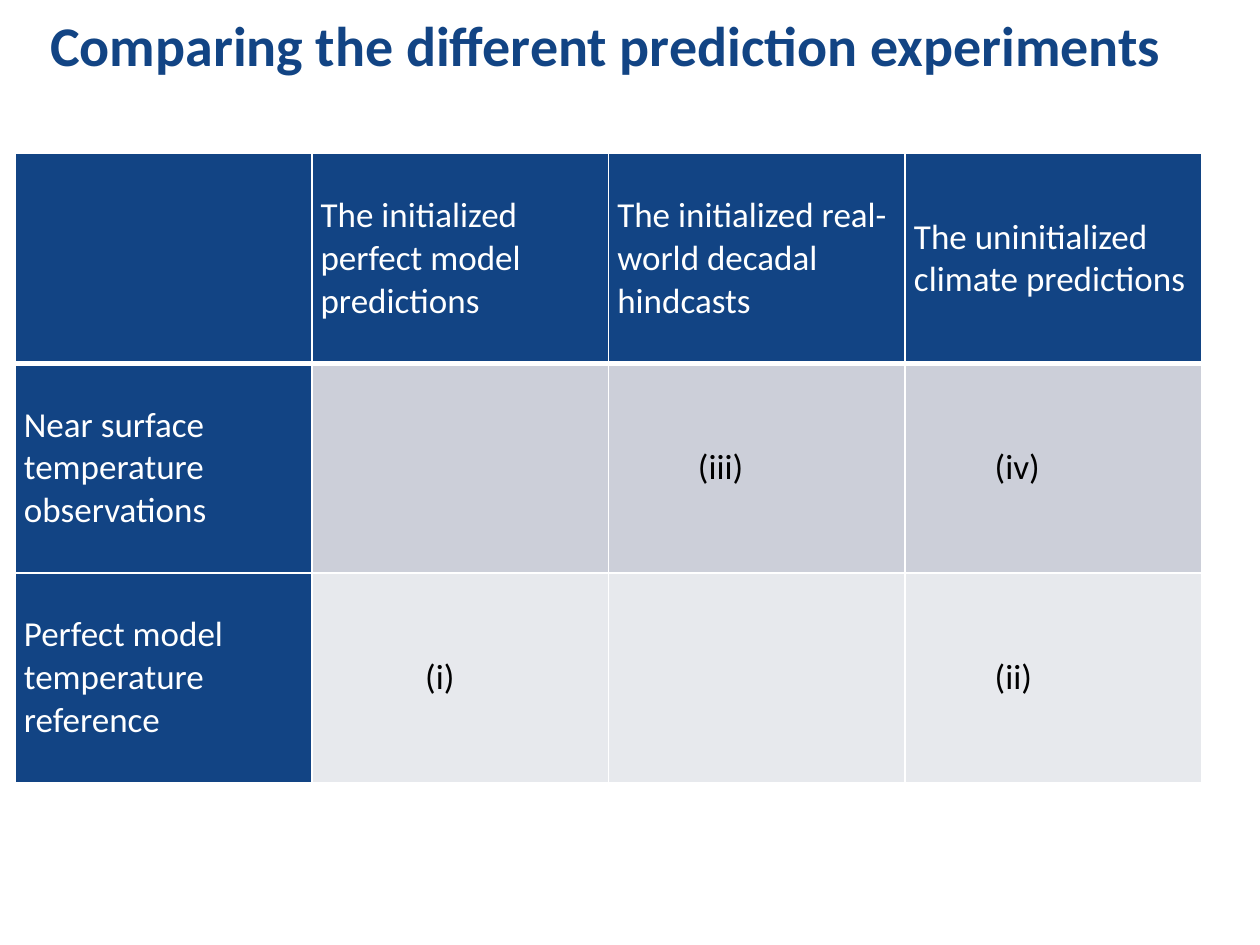
from lxml import etree
from pptx import Presentation
from pptx.dml.color import RGBColor
from pptx.enum.text import MSO_ANCHOR
from pptx.oxml.ns import qn
from pptx.util import Inches, Pt

NAVY = RGBColor(0x12, 0x44, 0x84)
WHITE = RGBColor(0xFF, 0xFF, 0xFF)
BLACK = RGBColor(0, 0, 0)
BANDS = [RGBColor(0xCC, 0xCF, 0xD9), RGBColor(0xE7, 0xE9, 0xED)]

ROWS = [
    ["", "The initialized perfect model predictions",
     "The initialized real-world decadal hindcasts",
     "The uninitialized climate predictions"],
    ["Near surface temperature observations", "", "(iii)", "(iv)"],
    ["Perfect model temperature reference", "(i)", "", "(ii)"],
]


def add_run(p, text, size, color, bold=False):
    r = p.add_run()
    r.text = text
    r.font.name = "Calibri"
    r.font.size = Pt(size)
    r.font.bold = bold
    r.font.color.rgb = color


def add_borders(cell, bottom):
    """Draw white cell borders, 1 pt except for the given bottom width."""
    tc_pr = cell._tc.get_or_add_tcPr()
    for side, width in (("L", 1), ("R", 1), ("T", 1), ("B", bottom)):
        ln = etree.SubElement(tc_pr, qn(f"a:ln{side}"), w=str(Pt(width)))
        fill = etree.SubElement(ln, qn("a:solidFill"))
        etree.SubElement(fill, qn("a:srgbClr"), val=str(WHITE))


prs = Presentation()
prs.slide_width, prs.slide_height = Inches(10), Inches(7.5)
s = prs.slides.add_slide(prs.slide_layouts[6])

title = s.shapes.add_textbox(Inches(0.3), Inches(0.04), Inches(9.31), Inches(0.69))
tf = title.text_frame
tf.word_wrap = True
tf.vertical_anchor = MSO_ANCHOR.MIDDLE
p = tf.paragraphs[0]
p.line_spacing = 0.9
add_run(p, "Comparing the different prediction experiments", 32, NAVY, bold=True)

table = s.shapes.add_table(3, 4, Inches(0.12), Inches(1.22), Inches(9.42), Inches(4.99)).table
table.first_row = table.horz_banding = False

for i, row in enumerate(ROWS):
    for j, text in enumerate(row):
        cell = table.cell(i, j)
        is_header = i == 0 or j == 0
        add_borders(cell, bottom=3 if i == 0 else 1)
        cell.fill.solid()
        cell.fill.fore_color.rgb = NAVY if is_header else BANDS[i - 1]
        cell.vertical_anchor = MSO_ANCHOR.MIDDLE
        left = 0.07 if is_header else 0.9 if text == "(i)" else 0.71
        cell.margin_left, cell.margin_right = Inches(left), Inches(0.07)
        cell.margin_top = cell.margin_bottom = 0
        if text:
            add_run(cell.text_frame.paragraphs[0], text, 20, WHITE if is_header else BLACK)

prs.save("out.pptx")
